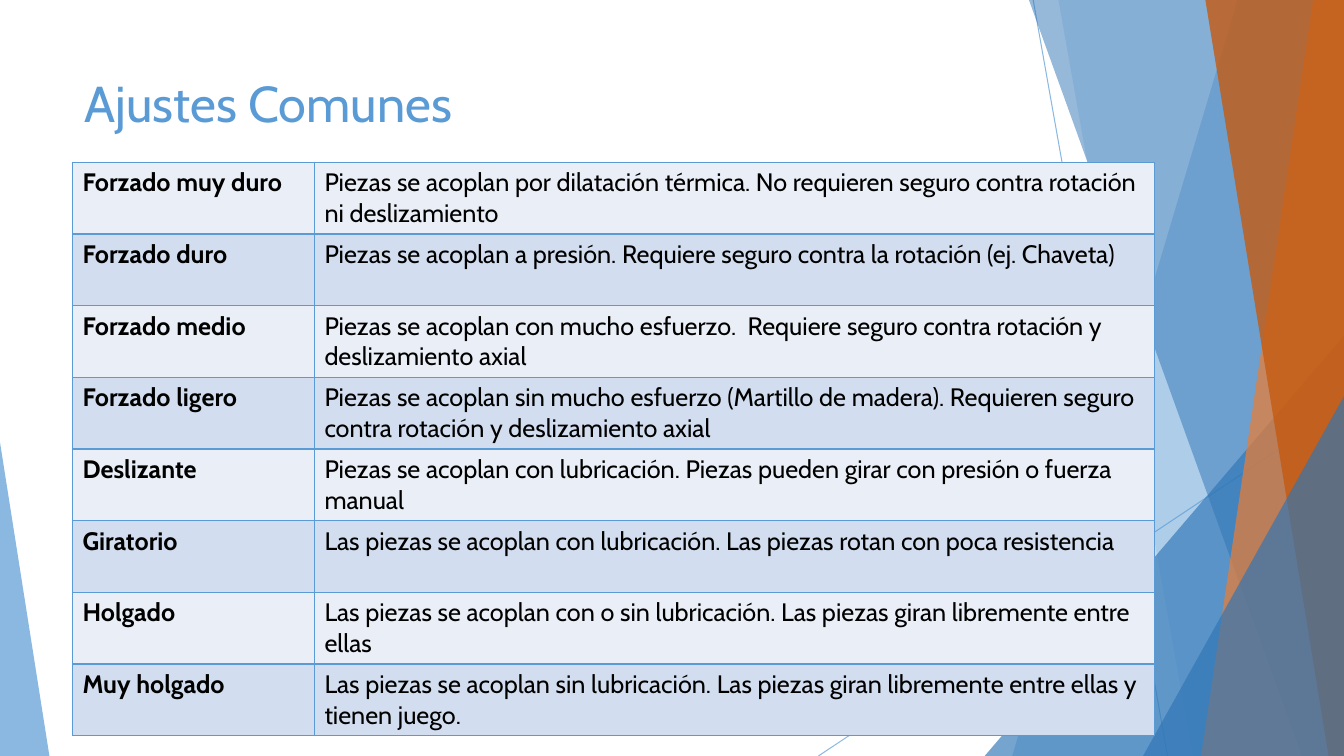
from dataclasses import dataclass

from lxml.etree import SubElement as Sub
from pptx import Presentation
from pptx.dml.color import RGBColor as Rgb
from pptx.enum.shapes import MSO_CONNECTOR as Conn, MSO_SHAPE as Kind
from pptx.enum.text import MSO_ANCHOR as Anchor, MSO_AUTO_SIZE as Auto, PP_ALIGN as Align
from pptx.oxml.ns import qn
from pptx.util import Pt


@dataclass(frozen=True)
class Theme:
    font: str = "Cabin"
    head: int = 36
    body: int = 18
    ink: str = "000000"
    blue: str = "5B9BD5"
    deep: str = "2E75B6"
    warm: str = "ED7D31"
    rust: str = "C55A11"
    bands: tuple = ("EAEFF7", "D2DEEF")


THEME = Theme()
WIDE, HIGH = 960, 540

FITS = [
    ("Forzado muy duro", "Piezas se acoplan por dilatación térmica. No requieren seguro contra rotación ni deslizamiento"),
    ("Forzado duro", "Piezas se acoplan a presión. Requiere seguro contra la rotación (ej. Chaveta)"),
    ("Forzado medio", "Piezas se acoplan con mucho esfuerzo.  Requiere seguro contra rotación y deslizamiento axial"),
    ("Forzado ligero", "Piezas se acoplan sin mucho esfuerzo (Martillo de madera). Requieren seguro contra rotación y deslizamiento axial"),
    ("Deslizante", "Piezas se acoplan con lubricación. Piezas pueden girar con presión o fuerza manual"),
    ("Giratorio", "Las piezas se acoplan con lubricación. Las piezas rotan con poca resistencia"),
    ("Holgado", "Las piezas se acoplan con o sin lubricación. Las piezas giran libremente entre ellas"),
    ("Muy holgado", "Las piezas se acoplan sin lubricación. Las piezas giran libremente entre ellas y tienen juego."),
]


def fade(fill, alpha):
    tint = fill._xPr.find(qn("a:solidFill"))[0]
    Sub(tint, qn("a:alpha"), val=str(alpha * 1000))


def paint(shape, color, alpha):
    shape.shadow.inherit = False
    shape.fill.solid()
    shape.fill.fore_color.rgb = Rgb.from_string(color)
    fade(shape.fill, alpha)
    shape.line.fill.background()


def ray(slide, x1, y1, x2, y2):
    line = slide.shapes.add_connector(Conn.STRAIGHT, Pt(x1), Pt(y1), Pt(x2), Pt(y2))
    line.line.width = Pt(0.75)
    line.line.fill.solid()
    line.line.color.rgb = Rgb.from_string(THEME.blue)
    fade(line.line.fill, 70)
    Sub(line._element.spPr, qn("a:effectLst"))


def shard(slide, box, top, base, color, alpha):
    x, y, w, h = box
    right, foot = x + w, y + h
    pen = slide.shapes.build_freeform(x + top, y, scale=Pt(1))
    pen.add_line_segments([(right, y), (right, foot), (x + base, foot)])
    paint(pen.convert_to_shape(), color, alpha)


def wedge(slide, box, peak, color, alpha):
    shape = slide.shapes.add_shape(Kind.ISOSCELES_TRIANGLE, *map(Pt, box))
    shape.adjustments[0] = peak
    paint(shape, color, alpha)


def decor(slide, box):
    x, y, w, h = box
    right, foot = x + w, y + h

    def corner(wide, high, color):
        wedge(slide, (right - wide, foot - high, wide, high), 1, color, 66)

    ray(slide, x + 738, y, x + 834, foot)
    ray(slide, right, y + 290, x + 584.6, foot)
    shard(slide, box, 884.2, 722.9, THEME.blue, 36)
    shard(slide, box, 756, 851.8, THEME.blue, 20)
    corner(256.6, 300.2, THEME.deep)
    shard(slide, box, 735.1, 929.5, THEME.deep, 50)
    shard(slide, box, 938.2, 858.2, THEME.warm, 70)
    shard(slide, box, 861.1, 949, THEME.rust, 80)
    corner(143.5, 257, THEME.deep)
    wedge(slide, (x, foot - 224, 35.3, 224), 0, THEME.blue, 70)


def style(para, size, color, bold=False):
    para.alignment = Align.LEFT
    font = para.font
    font.name, font.size, font.bold = THEME.font, Pt(size), bold
    font.color.rgb = Rgb.from_string(color)


def title(slide, box, text):
    shape = slide.shapes.title
    shape.left, shape.top, shape.width, shape.height = map(Pt, box)
    frame = shape.text_frame
    frame.text = text
    frame.word_wrap = True
    frame.auto_size = Auto.NONE
    frame.vertical_anchor = Anchor.TOP
    style(frame.paragraphs[0], THEME.head, THEME.blue)
    slide.shapes._spTree.append(shape._element)


def border(cell):
    props = cell._tc.get_or_add_tcPr()
    for side in ("lnL", "lnR", "lnT", "lnB"):
        edge = Sub(props, qn(f"a:{side}"), w=str(Pt(1)))
        Sub(Sub(edge, qn("a:solidFill")), qn("a:srgbClr"), val=THEME.blue)


def grid(slide, box, rows, first):
    wide, high = box[2:]
    table = slide.shapes.add_table(len(rows), 2, *map(Pt, box)).table
    table.first_row = table.horz_banding = False
    table.columns[0].width = Pt(first)
    table.columns[1].width = Pt(wide - first)
    for i, row in enumerate(rows):
        table.rows[i].height = Pt(high / len(rows))
        for j, text in enumerate(row):
            cell = table.cell(i, j)
            border(cell)
            cell.fill.solid()
            cell.fill.fore_color.rgb = Rgb.from_string(THEME.bands[i % 2])
            cell.text = text
            style(cell.text_frame.paragraphs[0], THEME.body, THEME.ink, j == 0)


def main():
    deck = Presentation()
    deck.slide_width, deck.slide_height = Pt(WIDE), Pt(HIGH)
    slide = deck.slides.add_slide(deck.slide_layouts[5])
    decor(slide, (0, 0, WIDE, HIGH))
    title(slide, (53.3, 48.2, 676.8, 103.7), "Ajustes Comunes")
    grid(slide, (51.8, 115.9, 772.6, 409.6), FITS, 172.8)
    deck.save("out.pptx")


if __name__ == "__main__":
    main()
